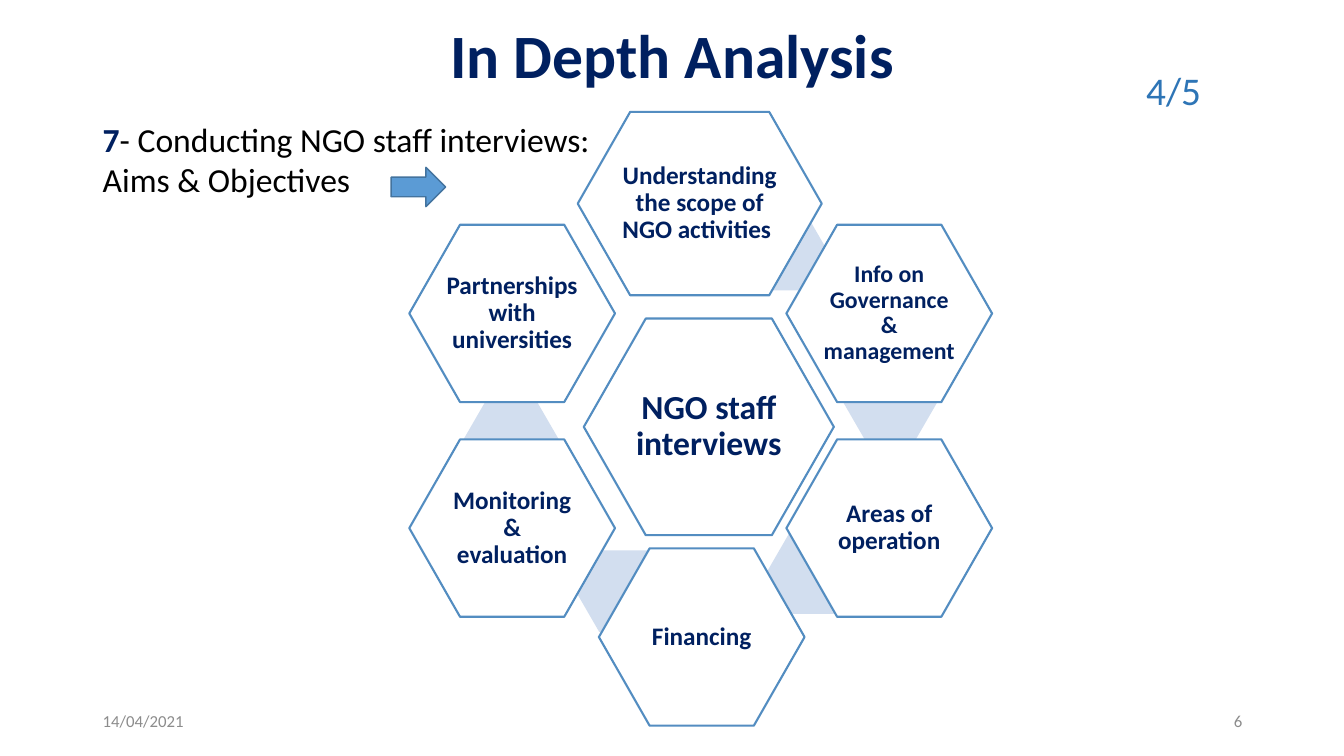
from pptx import Presentation
from pptx.dml.color import RGBColor
from pptx.enum.shapes import MSO_SHAPE as SHAPE
from pptx.enum.text import MSO_ANCHOR as ANCHOR, PP_ALIGN as ALIGN
from pptx.util import Inches, Pt

NAVY, BLACK, GREY, BLUE = "002060", "000000", "8C8C8C", "2E75B6"
HEX_LINE, LINK_FILL = "538DC1", "D2DEEF"
HEX_SIZE = (2.04, 1.76)
LINK_SIZE = (0.94, 0.81)
LEFT_COL, MID_COL, RIGHT_COL = 4.06, 5.94, 7.8
UPPER_ROW, LOWER_ROW = 2.23, 4.36

# label, hexagon box, font size, position of the link drawn behind it
TOPICS = [
    ("Understanding the scope of NGO activities ", (5.73, 1.11, 2.42, 1.82), 18, (7.26, 2.07)),
    ("Info on Governance & management", (RIGHT_COL, UPPER_ROW, *HEX_SIZE), 17, (8.36, 3.58)),
    ("Areas of operation", (RIGHT_COL, LOWER_ROW, *HEX_SIZE), 18, (7.6, 5.28)),
    ("Financing", (MID_COL, 5.44, *HEX_SIZE), 18, (5.71, 5.46)),
    ("Monitoring & evaluation", (LEFT_COL, LOWER_ROW, *HEX_SIZE), 18, (4.6, 3.95)),
    ("Partnerships with universities", (LEFT_COL, UPPER_ROW, *HEX_SIZE), 18, None),
]


def rgb(value):
    return RGBColor.from_string(value)


def add_run(paragraph, text, size, color, bold=False):
    run = paragraph.add_run()
    run.text = text
    font = run.font
    font.name, font.size, font.bold = "Calibri", Pt(size), bold
    font.color.rgb = rgb(color)


def add_figure(slide, kind, box, fill, line=None, width=1.5):
    figure = slide.shapes.add_shape(kind, *map(Inches, box))
    figure.shadow.inherit = False
    figure.fill.solid()
    figure.fill.fore_color.rgb = rgb(fill)
    if line:
        figure.line.color.rgb = rgb(line)
        figure.line.width = Pt(width)
    else:
        figure.line.fill.background()
    return figure


def add_topic(slide, label, box, size):
    hexagon = add_figure(slide, SHAPE.HEXAGON, box, "FFFFFF", HEX_LINE)
    hexagon.adjustments[0] = 0.286
    frame = hexagon.text_frame
    frame.word_wrap = True
    frame.vertical_anchor = ANCHOR.MIDDLE
    frame.margin_left = frame.margin_right = Inches(0.03)
    frame.margin_top = frame.margin_bottom = Inches(0.03)
    paragraph = frame.paragraphs[0]
    paragraph.alignment = ALIGN.CENTER
    paragraph.line_spacing = 0.9
    add_run(paragraph, label, size, NAVY, True)


def add_topic_ring(slide):
    add_topic(slide, "NGO staff interviews", (5.79, 3.16, 2.48, 2.15), 24)
    for label, box, size, link_at in TOPICS:
        if link_at:
            link = add_figure(slide, SHAPE.HEXAGON, (*link_at, *LINK_SIZE), LINK_FILL)
            link.adjustments[0] = 0.289
        add_topic(slide, label, box, size)


def add_text(slide, box, lines, align=ALIGN.LEFT, anchor=ANCHOR.TOP, wrap=False):
    """Each line is a list of (text, size, color, bold) runs."""
    frame = slide.shapes.add_textbox(*map(Inches, box)).text_frame
    frame.word_wrap = wrap
    frame.vertical_anchor = anchor
    for index, runs in enumerate(lines):
        paragraph = frame.add_paragraph() if index else frame.paragraphs[0]
        paragraph.alignment = align
        for run in runs:
            add_run(paragraph, *run)


def add_heading(slide, box):
    title = slide.shapes.title
    title.left, title.top, title.width, title.height = map(Inches, box)
    title.text_frame.vertical_anchor = ANCHOR.MIDDLE
    paragraph = title.text_frame.paragraphs[0]
    paragraph.alignment = ALIGN.CENTER
    paragraph.line_spacing = 0.9
    add_run(paragraph, "In Depth Analysis", 44, NAVY, True)


def add_step(slide, left, top):
    add_text(slide, (left, top, 5.08, 0.91), [
        [("7", 24, NAVY, True), ("- Conducting NGO staff interviews:", 24, BLACK)],
        [("Aims & Objectives", 24, BLACK)],
    ])
    arrow_box = (left + 2.96, top + 0.53, 0.54, 0.39)
    add_figure(slide, SHAPE.RIGHT_ARROW, arrow_box, "5B9BD5", "43739E", 1)


def add_footer(slide, left, top, width):
    part = 3
    for text, x, align in (("14/04/2021", left, ALIGN.LEFT),
                           ("6", left + width - part, ALIGN.RIGHT)):
        add_text(slide, (x, top, part, 0.4), [[(text, 12, GREY)]], align, ANCHOR.MIDDLE, True)


def main():
    deck = Presentation()
    deck.slide_width, deck.slide_height = Inches(13.33), Inches(7.5)
    slide = deck.slides.add_slide(deck.slide_layouts[5])
    add_heading(slide, (0.92, 0.09, 11.5, 0.99))
    add_topic_ring(slide)
    add_footer(slide, 0.92, 6.95, 11.5)
    add_text(slide, (11.27, 0.61, 0.75, 0.57), [[("4/5", 28, BLUE)]])
    add_step(slide, 0.92, 1.13)
    deck.save("out.pptx")


if __name__ == "__main__":
    main()
